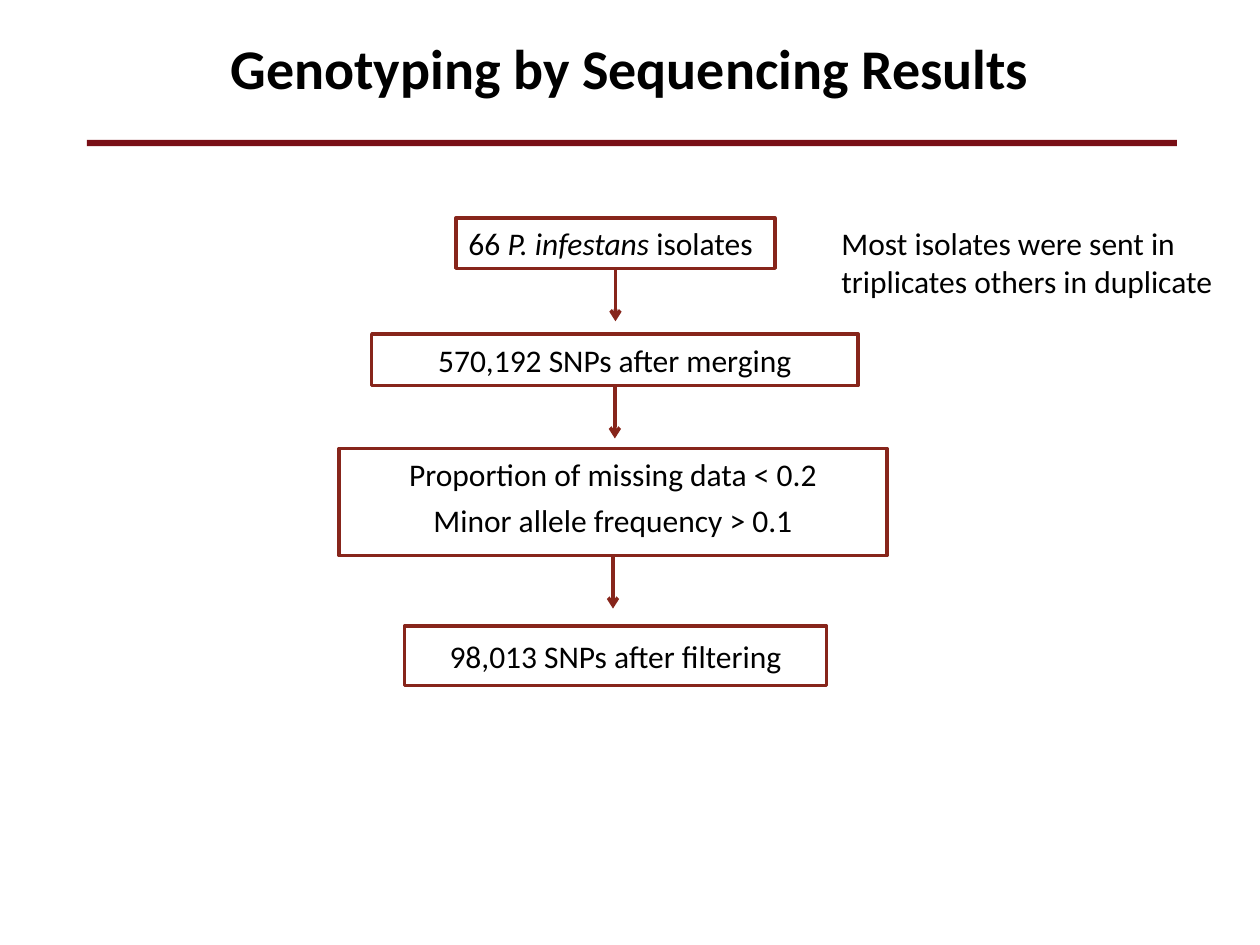
import pptx
import pptx.util
import pptx.dml.color
import pptx.enum.shapes
import pptx.enum.text
import pptx.oxml
import pptx.oxml.ns

Inches = pptx.util.Inches
Pt = pptx.util.Pt
ALIGN = pptx.enum.text.PP_ALIGN
ANCHOR = pptx.enum.text.MSO_ANCHOR
RECTANGLE = pptx.enum.shapes.MSO_SHAPE.RECTANGLE


def color(value):
    return pptx.dml.color.RGBColor.from_string(value)


def apply(target, values):
    for name, value in values.items():
        setattr(target, name, value)


class FlowSlide:
    outline = "87251B"
    rule_fill = "790F16"
    text_color = "000000"
    font = "Calibri"
    line_width = 2

    def __init__(self, deck):
        self.page = deck.slides.add_slide(deck.slide_layouts[5])

    def fill_text(self, shape, paragraphs, align, anchor, size=18, bold=False, gap=0):
        frame = shape.text_frame
        apply(frame, {
            "word_wrap": True,
            "auto_size": pptx.enum.text.MSO_AUTO_SIZE.NONE,
            "vertical_anchor": anchor,
        })
        for index, spans in enumerate(paragraphs):
            para = frame.add_paragraph() if index else frame.paragraphs[0]
            apply(para, {"alignment": align, "space_before": Pt(gap if index else 0)})
            for text, italic in spans:
                span = para.add_run()
                span.text = text
                apply(span.font, {"name": self.font, "size": Pt(size), "bold": bold, "italic": italic})
                span.font.color.rgb = color(self.text_color)

    def title(self, text, left, top, width, height):
        title = self.page.shapes.title
        place = {"left": left, "top": top, "width": width, "height": height}
        apply(title, {name: Inches(value) for name, value in place.items()})
        self.fill_text(title, [[(text, False)]], ALIGN.CENTER, ANCHOR.MIDDLE, size=32, bold=True)

    def rectangle(self, left, top, width, height):
        box = self.page.shapes.add_shape(RECTANGLE, *map(Inches, (left, top, width, height)))
        box.shadow.inherit = False
        return box

    def rule(self, left, top, width, height):
        bar = self.rectangle(left, top, width, height)
        bar.fill.solid()
        bar.fill.fore_color.rgb = color(self.rule_fill)
        bar.line.fill.background()

    def step(self, place, paragraphs, align=ALIGN.CENTER, anchor=ANCHOR.MIDDLE, gap=0):
        box = self.rectangle(*place)
        box.fill.background()
        box.line.color.rgb = color(self.outline)
        box.line.width = Pt(self.line_width)
        self.fill_text(box, paragraphs, align, anchor, gap=gap)
        return box

    def note(self, text, left, top, width, height):
        box = self.page.shapes.add_textbox(*map(Inches, (left, top, width, height)))
        self.fill_text(box, [[(text, False)]], ALIGN.LEFT, ANCHOR.TOP)

    def arrow_below(self, box, length):
        center = box.left + box.width // 2
        bottom = box.top + box.height
        arrow = self.page.shapes.add_connector(
            pptx.enum.shapes.MSO_CONNECTOR.STRAIGHT, center, bottom, center, bottom + Inches(length))
        arrow.begin_connect(box, 2)
        arrow.line.color.rgb = color(self.outline)
        arrow.line.width = Pt(self.line_width)
        namespace = pptx.oxml.ns.nsdecls("a")
        outline = arrow._element.spPr.find(pptx.oxml.ns.qn("a:ln"))
        outline.append(pptx.oxml.parse_xml(f'<a:tailEnd {namespace} type="arrow"/>'))
        arrow._element.spPr.append(pptx.oxml.parse_xml(f'<a:effectLst {namespace}/>'))


def main():
    deck = pptx.Presentation()
    deck.slide_width, deck.slide_height = Inches(10), Inches(7.5)
    slide = FlowSlide(deck)
    slide.rule(0.69, 1.11, 8.65, 0.05)
    slide.title("Genotyping by Sequencing Results", 0.66, -0.09, 8.68, 1.25)

    isolates = slide.step(
        (3.62, 1.73, 2.53, 0.4),
        [[("66 ", False), ("P. infestans ", True), ("isolates", False)]],
        align=ALIGN.LEFT, anchor=ANCHOR.TOP)
    merged = slide.step((2.95, 2.65, 3.86, 0.41), [[("570,192 SNPs after merging", False)]])
    criteria = slide.step(
        (2.69, 3.56, 4.35, 0.85),
        [[("Proportion of missing data < 0.2", False)], [("Minor allele frequency > 0.1", False)]],
        anchor=ANCHOR.TOP, gap=5)
    slide.step((3.21, 4.97, 3.35, 0.47), [[("98,013 SNPs after filtering", False)]])

    for box in (isolates, merged, criteria):
        slide.arrow_below(box, 0.42)
    slide.note("Most isolates were sent in triplicates others in duplicate", 6.58, 1.73, 3.21, 0.71)
    deck.save("out.pptx")


if __name__ == "__main__":
    main()
